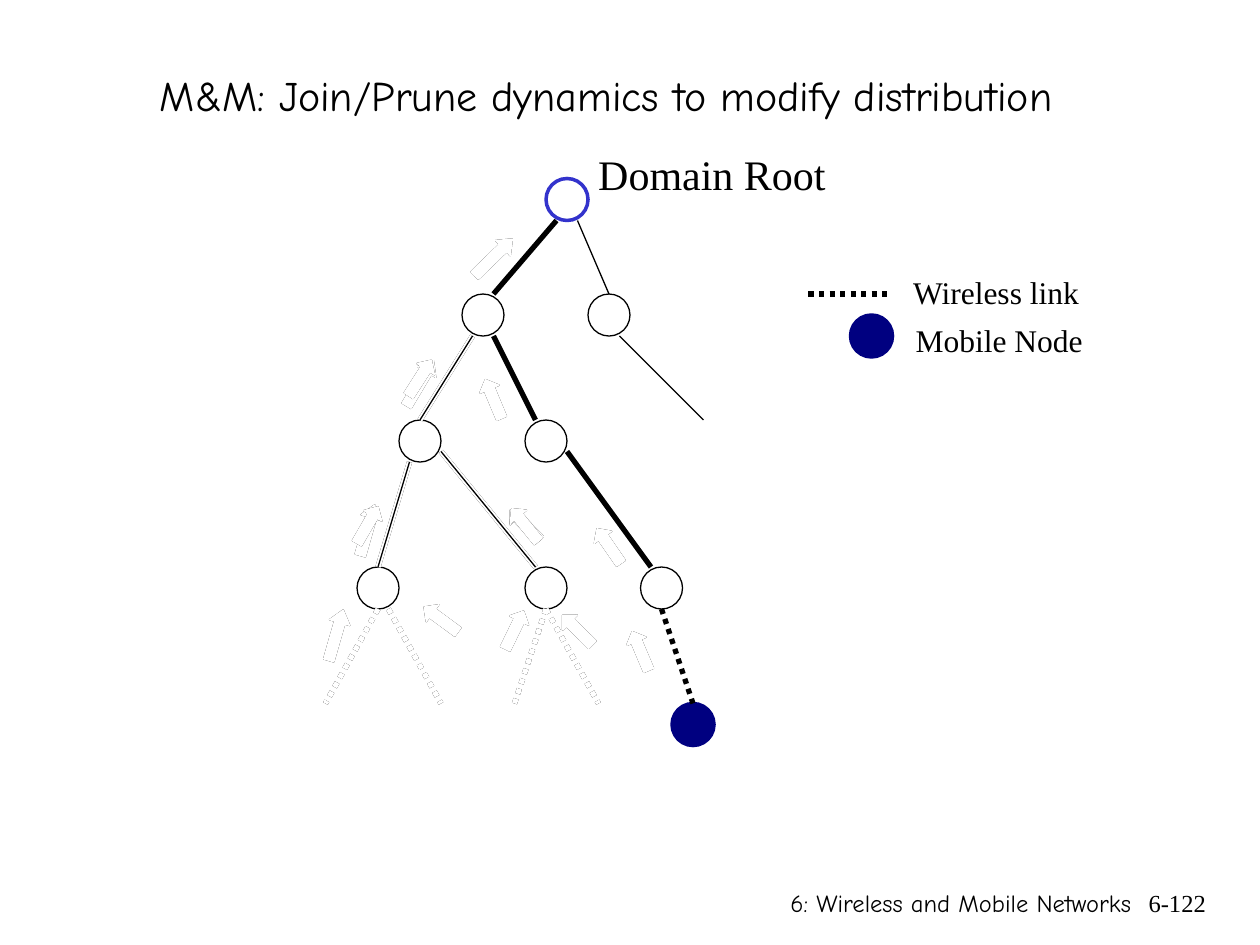
from lxml.etree import SubElement
from pptx import Presentation
from pptx.dml.color import RGBColor
from pptx.enum.dml import MSO_LINE_DASH_STYLE as Dash
from pptx.enum.shapes import MSO_CONNECTOR_TYPE as Connector, MSO_SHAPE as Shape
from pptx.enum.text import MSO_ANCHOR as Anchor, PP_ALIGN as Align
from pptx.oxml.ns import qn
from pptx.util import Cm, Pt

BLACK = RGBColor(0x00, 0x00, 0x00)
WHITE = RGBColor(0xFF, 0xFF, 0xFF)
BLUE = RGBColor(0x33, 0x33, 0xCC)
NAVY = RGBColor(0x00, 0x00, 0x80)
GREEN = RGBColor(0x00, 0xCC, 0x99)
RED = RGBColor(0xFF, 0x00, 0x00)

HEADING_FONT = "Comic Neue"
BODY_FONT = "Times New Roman"
THIN, MEDIUM, THICK = 0.75, 2, 3
NODE_SIZE = 4
ARROW_WIDTH = 2


def grid(steps):
    """The tree lies on a grid of twelve steps to the inch."""
    return Cm(steps * 2.54 / 12)


class TreeSlide:
    def __init__(self, presentation):
        self.slide = presentation.slides.add_slide(presentation.slide_layouts[5])
        self.shapes = self.slide.shapes

    def format_text(self, shape, text, box, size, font, align=Align.LEFT, wrap=False):
        shape.left, shape.top, shape.width, shape.height = map(Cm, box)
        frame = shape.text_frame
        frame.text = text
        frame.word_wrap = wrap
        frame.vertical_anchor = Anchor.TOP
        paragraph = frame.paragraphs[0]
        paragraph.alignment = align
        paragraph.font.size = Pt(size)
        paragraph.font.name = font
        paragraph.font.color.rgb = BLACK

    def title(self, text, box):
        self.format_text(self.shapes.title, text, box, 24, HEADING_FONT)

    def label(self, text, box, size, font=BODY_FONT, **layout):
        shape = self.shapes.add_textbox(0, 0, 0, 0)
        self.format_text(shape, text, box, size, font, **layout)

    def outline(self, kind, left, top, width, height, fill, color, weight):
        shape = self.shapes.add_shape(
            kind, grid(left), grid(top), grid(width), grid(height))
        shape.shadow.inherit = False
        if fill is None:
            shape.fill.background()
        else:
            shape.fill.solid()
            shape.fill.fore_color.rgb = fill
        shape.line.color.rgb = color
        shape.line.width = Pt(weight)
        return shape

    def node(self, left, top, color=BLACK, weight=THIN, fill=None):
        self.outline(Shape.OVAL, left, top, NODE_SIZE, NODE_SIZE, fill, color, weight)

    def mobile_node(self, left, top):
        self.node(left, top, NAVY, MEDIUM, NAVY)

    def link(self, ends, weight=THIN, color=BLACK, dash=None):
        connector = self.shapes.add_connector(Connector.STRAIGHT, *map(grid, ends))
        connector.line.color.rgb = color
        connector.line.width = Pt(weight)
        if dash:
            connector.line.dash_style = dash
        SubElement(connector._element.spPr, qn("a:effectLst"))

    def wireless_link(self, ends, color=BLACK):
        self.link(ends, THICK, color, Dash.ROUND_DOT)

    def pruned_link(self, ends):
        """A thick link faded to white, with the thin tree link on top."""
        self.link(ends, THICK)
        self.link(ends, THICK, WHITE)
        self.link(ends)

    def faded_arrow(self, left, top, height, rotation, color):
        """A message arrow whose white cover leaves a faint outline."""
        for fill, line in ((color, BLACK), (WHITE, WHITE)):
            arrow = self.outline(
                Shape.UP_ARROW, left, top, ARROW_WIDTH, height, fill, line, THIN)
            arrow.adjustments[0] = 0.5
            arrow.adjustments[1] = height / 4 / ARROW_WIDTH
            arrow.rotation = rotation


NODES = [(44, 28), (56, 28), (38, 40), (50, 40), (34, 54), (50, 54), (61, 54)]
TREE_LINKS = [(55, 21, 58, 28), (59, 32, 67, 40)]
ACTIVE_LINKS = [(53, 21, 47, 28), (47, 32, 51, 40), (54, 43, 62, 54)]
PRUNED_LINKS = [(39, 44, 36, 54), (42, 43, 51, 54), (45, 32, 40, 40)]
FADED_WIRELESS_LINKS = [
    (36, 58, 31, 67), (37, 58, 42, 67), (52, 58, 57, 67), (52, 58, 49, 67)]
# left, top, height, rotation, color: joins are green, prunes are red
ARROWS = [
    (31, 58, 5, 16, GREEN), (34, 48, 5, 16, GREEN),
    (39, 34, 5, 30.8, GREEN), (46, 22, 5, 45.9, GREEN),
    (49, 48, 4, 315.7, GREEN), (48, 58, 4, 26, GREEN),
    (41, 57, 4, 306.4, RED), (34, 48, 4, 30.1, RED),
    (60, 60, 4, 337.1, GREEN), (57, 50, 4, 325.4, GREEN),
    (46, 36, 4, 337.3, GREEN), (54, 58, 4, 314.4, RED),
    (49, 48, 4, 320.8, RED), (39, 34, 4, 32.7, RED),
]


def main():
    presentation = Presentation()
    presentation.slide_width, presentation.slide_height = Cm(25.4), Cm(19.05)
    tree = TreeSlide(presentation)
    tree.title("M&M: Join/Prune dynamics to modify distribution",
               (2.97, 1.27, 20.17, 1.27))

    tree.node(52, 17, BLUE, MEDIUM)
    for position in NODES:
        tree.node(*position)
    for ends in TREE_LINKS:
        tree.link(ends)
    for ends in ACTIVE_LINKS:
        tree.link(ends, THICK)
    tree.mobile_node(64, 67)
    tree.wireless_link((63, 58, 66, 67))
    for color in (BLACK, WHITE):
        for ends in FADED_WIRELESS_LINKS:
            tree.wireless_link(ends, color)
    for ends in PRUNED_LINKS:
        tree.pruned_link(ends)
    for arrow in ARROWS:
        tree.faded_arrow(*arrow)
    tree.label("Domain Root", (11.81, 2.87, 5.11, 1.27), 24)

    tree.wireless_link((77, 28, 85, 28))
    tree.label("Wireless link", (18.16, 5.38, 3.89, 1.02), 18)
    tree.mobile_node(81, 30)
    tree.label("Mobile Node", (18.21, 6.35, 3.89, 1.02), 18)

    tree.label("6: Wireless and Mobile Networks", (12.34, 17.78, 10.72, 1.27),
               14, HEADING_FONT, align=Align.RIGHT, wrap=True)
    tree.label("6-122", (22.68, 17.78, 1.88, 1.27), 14, align=Align.RIGHT, wrap=True)
    presentation.save("out.pptx")


if __name__ == "__main__":
    main()
